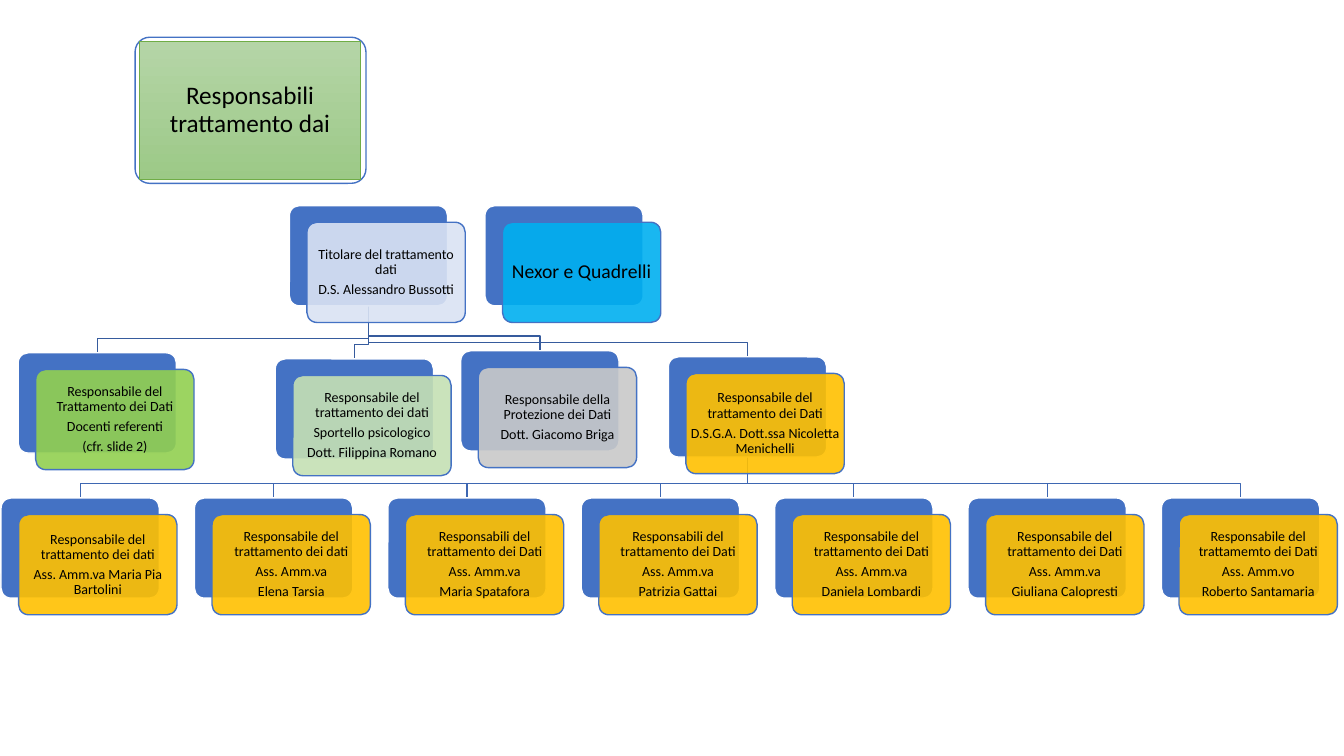
import pptx
import pptx.util
import pptx.dml.color
import pptx.enum.shapes
import pptx.enum.text
import pptx.oxml.ns
import lxml.etree

deck = pptx.Presentation()
deck.slide_width = pptx.util.Inches(13.33)
deck.slide_height = pptx.util.Inches(7.5)
shapes = deck.slides.add_slide(deck.slide_layouts[6]).shapes

# One column and one row are each a hundredth of the slide
COL = deck.slide_width / 100
ROW = deck.slide_height / 100
WIDE, HIGH = 11.78, 13.26
RIGHT, DOWN = 1.31, 2.2
BEND = 1.93
BLUE = "4472C4"
GOLD = "FFC000"
ROUND = pptx.enum.shapes.MSO_SHAPE.ROUNDED_RECTANGLE
RECT = pptx.enum.shapes.MSO_SHAPE.RECTANGLE


def paint(shape, fill, line, weight=1, alpha=100):
    """Fill takes no colour, one hex colour, or a pair for a gradient from the top."""
    shape.shadow.inherit = False
    rgb = pptx.dml.color.RGBColor.from_string
    if fill is None:
        shape.fill.background()
    elif isinstance(fill, tuple):
        shape.fill.gradient()
        shape.fill.gradient_angle = 270
        for stop, tone, place in zip(shape.fill.gradient_stops, fill, (0, 1)):
            stop.color.rgb = rgb(tone)
            stop.position = place
    else:
        shape.fill.solid()
        shape.fill.fore_color.rgb = rgb(fill)
        if alpha < 100:
            qn = pptx.oxml.ns.qn
            tone = shape.element.spPr.find(qn("a:solidFill"))[0]
            lxml.etree.SubElement(tone, qn("a:alpha")).set("val", str(alpha * 1000))
    shape.line.color.rgb = rgb(line)
    shape.line.width = pptx.util.Pt(weight)


def write(shape, text, size=10, inset=0.01, color="000000"):
    frame = shape.text_frame
    frame.word_wrap = True
    frame.vertical_anchor = pptx.enum.text.MSO_ANCHOR.MIDDLE
    frame.margin_left = frame.margin_right = pptx.util.Inches(inset)
    frame.margin_top = frame.margin_bottom = pptx.util.Inches(inset)
    frame.text = text
    for para in frame.paragraphs:
        para.alignment = pptx.enum.text.PP_ALIGN.CENTER
        para.line_spacing = 0.9
        para.space_after = pptx.util.Pt(size * 0.35)
        para.font.size = pptx.util.Pt(size)
        para.font.name = "Calibri"
        para.font.color.rgb = pptx.dml.color.RGBColor.from_string(color)


# Cards: column, row, fill, text, text size
head = (21.53, 27.2, "DAE3F3",
        "Titolare del trattamento dati\nD.S. Alessandro Bussotti", 10)
firms = (36.08, 27.2, "00B0F0", "Nexor e Quadrelli", 14)
staff = [
    (1.35, 46.67, "92D050",
     "Responsabile del Trattamento dei Dati\nDocenti referenti\n(cfr. slide 2)", 10),
    (20.48, 47.47, "C5E0B4",
     "Responsabile del trattamento dei dati\nSportello psicologico\n"
     "Dott. Filippina Romano", 10),
    (34.28, 46.4, "C9C9C9",
     "Responsabile della Protezione dei Dati\nDott. Giacomo Briga", 10),
    (49.73, 47.2, GOLD,
     "Responsabile del trattamento dei Dati\n"
     "D.S.G.A. Dott.ssa Nicoletta Menichelli", 10),
]
clerks = [
    "Responsabile del trattamento dei dati\nAss. Amm.va Maria Pia Bartolini",
    "Responsabile del trattamento dei dati\nAss. Amm.va\nElena Tarsia",
    "Responsabili del trattamento dei Dati\nAss. Amm.va\nMaria Spatafora",
    "Responsabili del trattamento dei Dati\nAss. Amm.va\nPatrizia Gattai",
    "Responsabile del trattamento dei Dati\nAss. Amm.va\nDaniela Lombardi",
    "Responsabile del trattamento dei Dati\nAss. Amm.va\nGiuliana Calopresti",
    "Responsabile del trattamemto dei Dati\nAss. Amm.vo\nRoberto Santamaria",
]
desk = [(0.08 + 14.39 * i, 65.87, GOLD, text, 10) for i, text in enumerate(clerks)]

# Elbow links, behind the cards
for boss, team, tone in ((staff[-1], desk, "3E67B2"), (head, staff, "365B9D")):
    start = boss[0] + WIDE / 2
    for card in team:
        end, top = card[0] + WIDE / 2, card[1]
        points = [(start, boss[1] + HIGH), (start, top - BEND), (end, top - BEND), (end, top)]
        points = [(round(x * COL), round(y * ROW)) for x, y in points]
        build = shapes.build_freeform(*points[0])
        build.add_line_segments(points[1:], close=False)
        paint(build.convert_to_shape(), None, tone)

# Each card is a blue back with a lighter front shifted right and down
for x, y, fill, text, size in [head, *staff, *desk, firms]:
    back = shapes.add_shape(ROUND, round(x * COL), round(y * ROW),
                            round(WIDE * COL), round(HIGH * ROW))
    front = shapes.add_shape(ROUND, round((x + RIGHT) * COL), round((y + DOWN) * ROW),
                             round(WIDE * COL), round(HIGH * ROW))
    back.adjustments[0] = front.adjustments[0] = 0.1
    paint(back, BLUE, "FFFFFF")
    paint(front, fill, BLUE, alpha=90)
    write(front, text, size=size)

# Title
rim = shapes.add_shape(ROUND, round(10.05 * COL), round(4.93 * ROW),
                       round(17.18 * COL), round(19.33 * ROW))
rim.adjustments[0] = 0.1
paint(rim, "FFFFFF", BLUE, alpha=90)
title = shapes.add_shape(RECT, round(10.35 * COL), round(5.47 * ROW),
                         round(16.5 * COL), round(18.27 * ROW))
paint(title, ("B5D5A7", "9CC987"), "70AD47", weight=0.5)
write(title, "Responsabili trattamento dai", size=18, inset=0.07)

deck.save("out.pptx")
